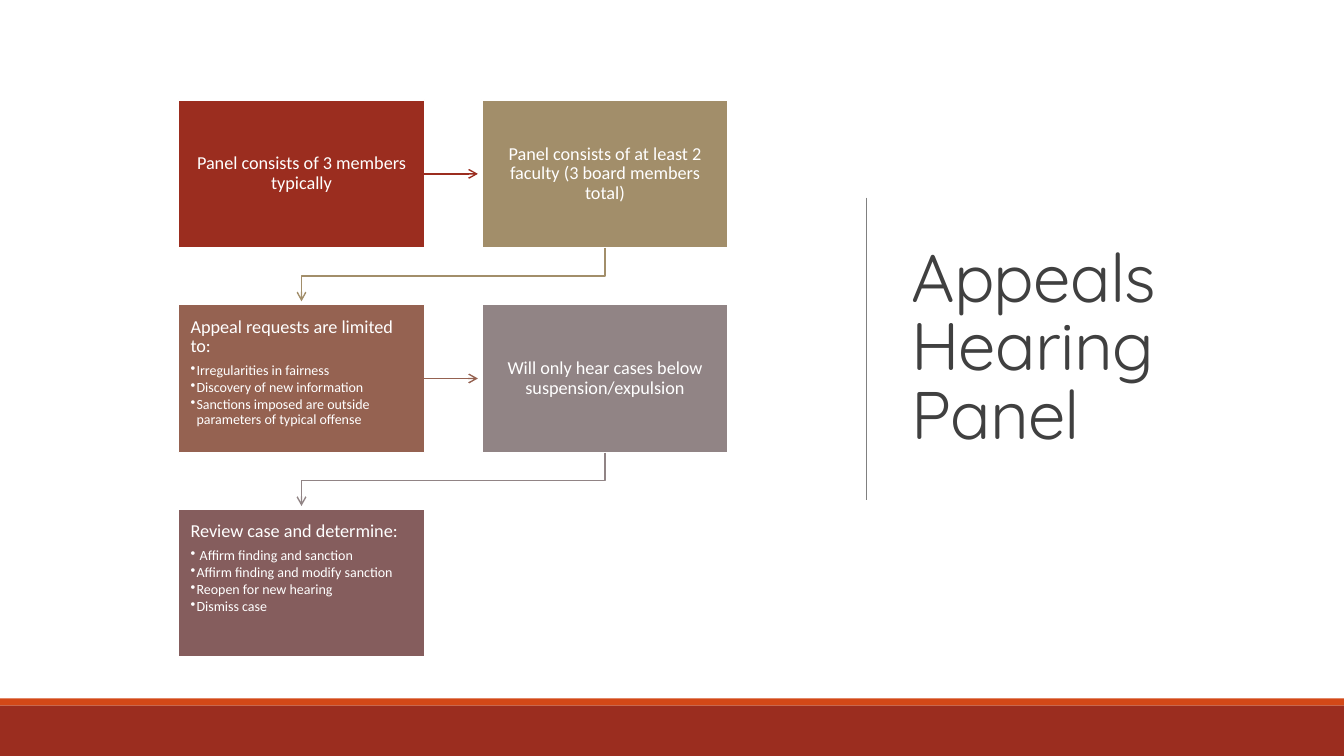
from lxml import etree
from pptx import Presentation
from pptx.dml.color import RGBColor
from pptx.enum.shapes import MSO_CONNECTOR, MSO_SHAPE
from pptx.enum.text import MSO_ANCHOR, PP_ALIGN
from pptx.oxml.ns import qn
from pptx.util import Inches, Pt

RECT = MSO_SHAPE.RECTANGLE
STRAIGHT = MSO_CONNECTOR.STRAIGHT
TOP, MIDDLE = MSO_ANCHOR.TOP, MSO_ANCHOR.MIDDLE
LEFT, CENTER = PP_ALIGN.LEFT, PP_ALIGN.CENTER


def color(code):
    return RGBColor.from_string(code)


def stroke(line, code, width, arrow=False):
    """Style a connector or open path, with no shadow and an optional arrowhead."""
    line.line.color.rgb = color(code)
    line.line.width = Pt(width)
    props = line._element.spPr
    if arrow:
        etree.SubElement(props.find(qn("a:ln")), qn("a:tailEnd"), type="arrow")
    if props.find(qn("a:effectLst")) is None:
        etree.SubElement(props, qn("a:effectLst"))


deck = Presentation()
deck.slide_width, deck.slide_height = Inches(13.33), Inches(7.5)
slide = deck.slides.add_slide(deck.slide_layouts[6])
shapes = slide.shapes

# Title and the rule beside it
title = shapes.add_textbox(Inches(8.94), Inches(0.71), Inches(3.69), Inches(5.53))
frame = title.text_frame
frame.word_wrap = True
frame.vertical_anchor = MIDDLE
frame.text = "Appeals Hearing Panel"
para = frame.paragraphs[0]
para.line_spacing = 0.85
font = para.runs[0].font
font.name, font.size = "Quicksand", Pt(48)
font.color.rgb = color("404040")
para.runs[0]._r.get_or_add_rPr().set("spc", "-50")

rule = shapes.add_connector(STRAIGHT, Inches(8.59), Inches(1.96), Inches(8.59), Inches(4.96))
stroke(rule, "808080", 0.5)

# Footer bands
for top, high, fill in [(6.93, 0.07, "D34817"), (7, 0.5, "9B2D1F")]:
    band = shapes.add_shape(RECT, 0, Inches(top), deck.slide_width, Inches(high))
    band.shadow.inherit = False
    band.fill.solid()
    band.fill.fore_color.rgb = color(fill)
    band.line.fill.background()

# Steps run left to right, then down, on a grid of two columns
X, Y = 1.77, 0.99
WIDE, HIGH = 2.44, 1.47
STEP_X, STEP_Y = 3.01, 2.03
steps = [
    ("9B2D1F", "Panel consists of 3 members typically", []),
    ("A28E6A", "Panel consists of at least 2 faculty (3 board members total)", []),
    ("956251", "Appeal requests are limited to:", [
        "Irregularities in fairness",
        "Discovery of new information",
        "Sanctions imposed are outside parameters of typical offense"]),
    ("918485", "Will only hear cases below suspension/expulsion", []),
    ("855D5D", "Review case and determine:", [
        " Affirm finding and sanction",
        "Affirm finding and modify sanction",
        "Reopen for new hearing",
        "Dismiss case"]),
]

for i, (fill, head, items) in enumerate(steps):
    row, col = divmod(i, 2)
    x, y = X + col * STEP_X, Y + row * STEP_Y

    box = shapes.add_shape(RECT, Inches(x), Inches(y), Inches(WIDE), Inches(HIGH))
    box.shadow.inherit = False
    box.fill.solid()
    box.fill.fore_color.rgb = color(fill)
    box.line.color.rgb = color("FFFFFF")
    box.line.width = Pt(1.25)

    frame = box.text_frame
    frame.word_wrap = True
    frame.margin_left = frame.margin_right = Inches(0.12)
    frame.margin_top = frame.margin_bottom = Inches(0.13)
    frame.vertical_anchor = TOP if items else MIDDLE
    frame.text = "\n".join([head] + items)
    for n, para in enumerate(frame.paragraphs):
        para.alignment = LEFT if items else CENTER
        para.line_spacing = 0.9
        para.space_after = Pt(1.5 if n else 4.5)
        font = para.runs[0].font
        font.name, font.size = "Calibri", Pt(10 if n else 13)
        font.color.rgb = color("FFFFFF")
        if n:
            props = para._p.get_or_add_pPr()
            props.set("lvl", "1")
            props.set("marL", str(Inches(0.06)))
            props.set("indent", str(-Inches(0.06)))
            etree.SubElement(props, qn("a:buChar"), char="•")

    # Arrow to the next step, in this step's colour
    if i == len(steps) - 1:
        continue
    if col == 0:
        mid, start = Inches(y + HIGH / 2), x + WIDE
        arrow = shapes.add_connector(STRAIGHT, Inches(start), mid, Inches(start + 0.53), mid)
    else:
        mid, low = x + WIDE / 2, y + HIGH
        bend = [(mid, low + 0.28), (mid - STEP_X, low + 0.28), (mid - STEP_X, low + 0.53)]
        turn = shapes.build_freeform(Inches(mid), Inches(low))
        turn.add_line_segments([(Inches(a), Inches(b)) for a, b in bend], close=False)
        arrow = turn.convert_to_shape()
        arrow.fill.background()
    stroke(arrow, fill, 1, arrow=True)

deck.save("out.pptx")
